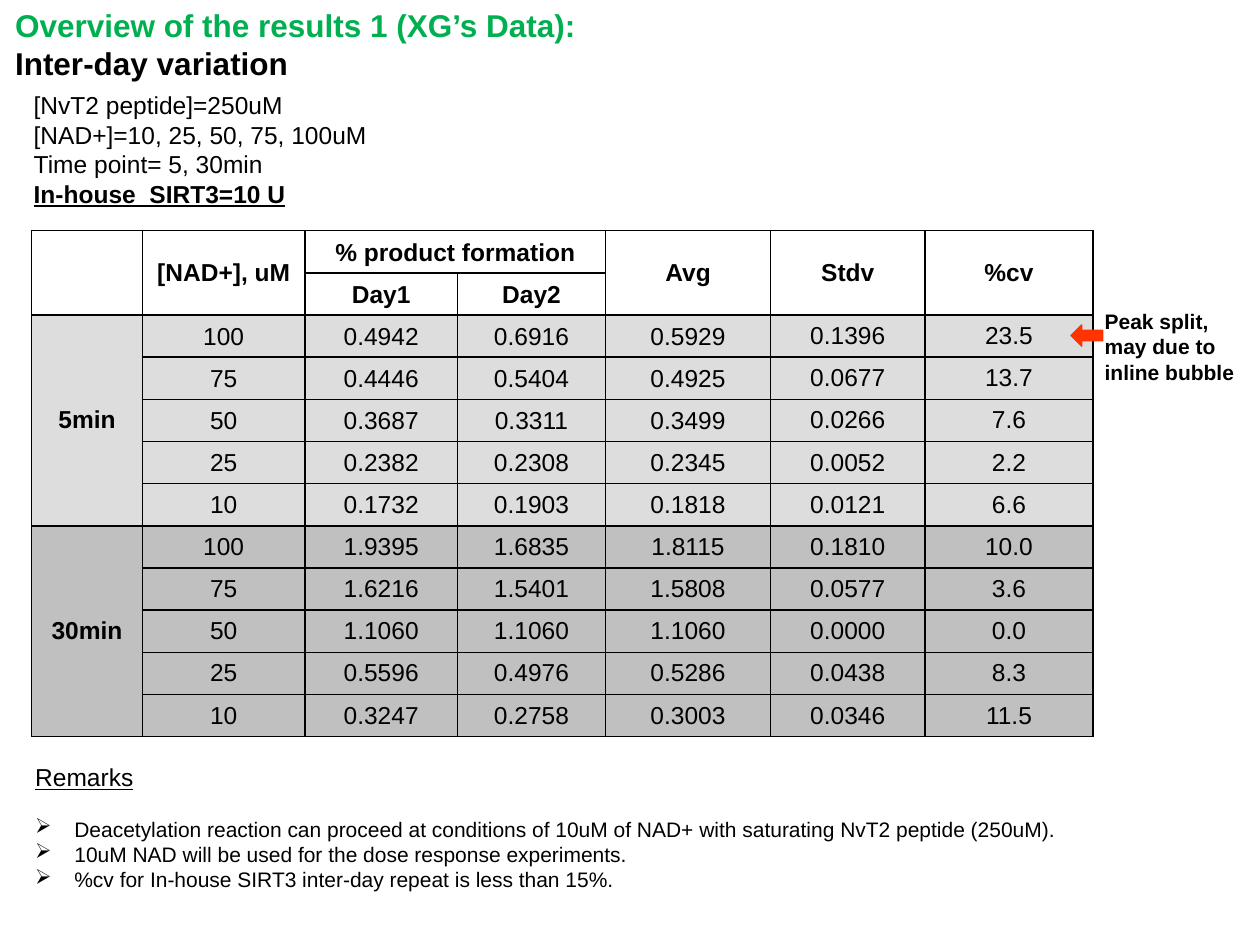
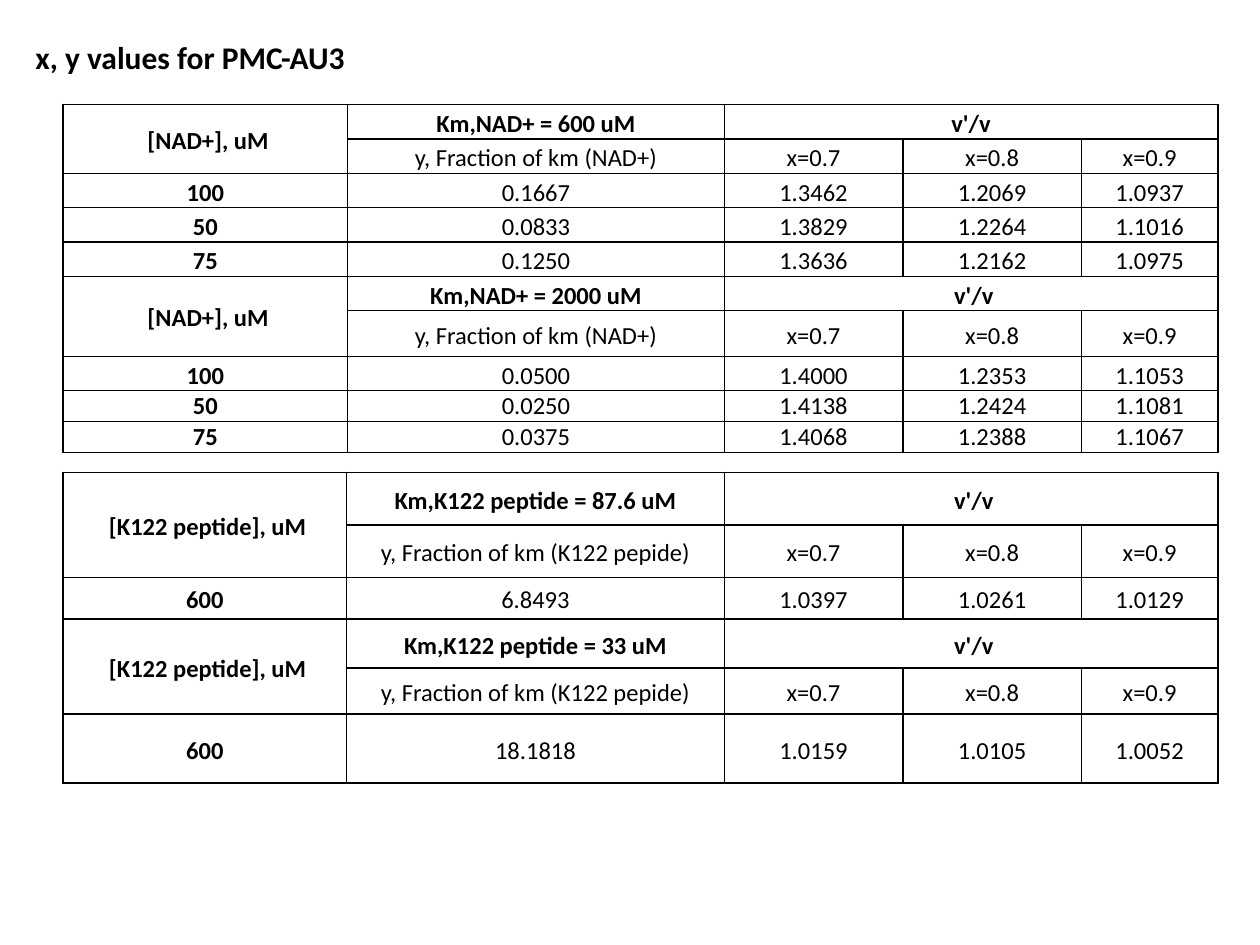
import pptx
import pptx.util
import pptx.dml.color
import pptx.enum.shapes
import pptx.enum.text
import pptx.oxml
import pptx.oxml.ns
import lxml.etree

Cm, Pt = pptx.util.Cm, pptx.util.Pt
ALIGN = pptx.enum.text.PP_ALIGN
ANCHOR = pptx.enum.text.MSO_ANCHOR
qn = pptx.oxml.ns.qn
HUES = {"ink": "000000", "green": "00B050", "red": "FF3300",
        "pale": "DDDDDD", "grey": "C0C0C0"}


def rgb(hue):
    return pptx.dml.color.RGBColor.from_string(HUES[hue])


def put(obj, form):
    for key, val in form.items():
        setattr(obj, key, val)


class Deck:
    """Holds the style and the current slide."""

    def __init__(self):
        self.show = pptx.Presentation()
        put(self.show, {"slide_width": Cm(25.4), "slide_height": Cm(19.05)})
        self.slide = None
        self.face = "Arial"

    def page(self, face):
        self.face = face
        self.slide = self.show.slides.add_slide(self.show.slide_layouts[5])

    def line(self, par, text, size, hue="ink", **form):
        run = par.add_run()
        run.text = text
        put(run.font, {"name": self.face, "size": Pt(size), "bold": False, **form})
        run.font.color.rgb = rgb(hue)

    def fill(self, frame, lines):
        """Write one paragraph for each dict of line values."""
        for i, form in enumerate(lines):
            par = frame.add_paragraph() if i else frame.paragraphs[0]
            par.alignment = ALIGN.LEFT
            self.line(par, **form)

    def title(self, box, lines):
        head = self.slide.shapes.title
        put(head, dict(zip(("left", "top", "width", "height"), map(Cm, box))))
        put(head.text_frame, {"word_wrap": False, "vertical_anchor": ANCHOR.TOP,
                              "auto_size": pptx.enum.text.MSO_AUTO_SIZE.NONE})
        self.fill(head.text_frame, lines)

    def text(self, box, lines):
        frame = self.slide.shapes.add_textbox(*map(Cm, box)).text_frame
        frame.word_wrap = True
        self.fill(frame, lines)
        return frame

    def bullet(self, par, mark, dent):
        props = par._p.get_or_add_pPr()
        props.set("marL", str(Cm(dent)))
        props.set("indent", str(-Cm(dent)))
        lxml.etree.SubElement(props, qn("a:buChar")).set("char", mark)

    def arrow(self, box, hue):
        kind = pptx.enum.shapes.MSO_SHAPE.LEFT_ARROW
        shape = self.slide.shapes.add_shape(kind, *map(Cm, box))
        shape.shadow.inherit = False
        shape.fill.solid()
        shape.fill.fore_color.rgb = rgb(hue)
        shape.line.color.rgb = rgb(hue)
        shape.line.width = Pt(0.75)

    def edge(self, cell):
        props = cell._tc.get_or_add_tcPr()
        for side in ("lnL", "lnR", "lnT", "lnB"):
            rule = lxml.etree.SubElement(props, qn("a:" + side), w=str(Pt(1)))
            paint = lxml.etree.SubElement(rule, qn("a:solidFill"))
            lxml.etree.SubElement(paint, qn("a:srgbClr"), val=HUES["ink"])

    def table(self, spot, cols, rows, data, heads, spans, low, shade=None,
              roomy=None, tight=None, space=None):
        """Bold: first column and head rows. Low cells sit at the bottom."""
        size = map(Cm, (*spot, sum(cols), sum(rows)))
        grid = self.slide.shapes.add_table(len(rows), len(cols), *size).table
        put(grid, {"first_row": False, "horz_banding": False})
        for part, wide in zip(grid.columns, cols):
            part.width = Cm(wide)
        for part, high in zip(grid.rows, rows):
            part.height = Cm(high)
        for r, row in enumerate(data):
            for c, text in enumerate(row):
                cell, down = grid.cell(r, c), (r, c) in low
                self.edge(cell)
                hue = shade(r) if shade else None
                if hue:
                    cell.fill.solid()
                    cell.fill.fore_color.rgb = rgb(hue)
                else:
                    cell.fill.background()
                cell.vertical_anchor = ANCHOR.BOTTOM if down else ANCHOR.MIDDLE
                put(cell, (tight if down else roomy) or {})
                par = cell.text_frame.paragraphs[0]
                put(par, {"alignment": ALIGN.CENTER,
                          "line_spacing": None if down else space})
                if text:
                    self.line(par, text, 14, bold=c == 0 or r in heads)
                else:
                    par._p.get_or_add_endParaRPr().set("sz", "1400")
        for top, left, end, right in spans:
            grid.cell(top, left).merge(grid.cell(end, right))


def days(deck):
    deck.page("Arial")
    deck.title((0.05, 0, 11.91, 1.8), [
        {"text": "Overview of the results 1 (XG’s Data):", "size": 18,
         "hue": "green", "bold": True},
        {"text": "Inter-day variation", "size": 18, "bold": True}])

    # Conditions
    facts = ["[NvT2 peptide]=250uM", "[NAD+]=10, 25, 50, 75, 100uM",
             "Time point= 5, 30min"]
    deck.text((0.43, 1.7, 12.7, 2.62), [
        *({"text": fact, "size": 14} for fact in facts),
        {"text": "In-house  SIRT3=10 U", "size": 14, "bold": True,
         "underline": True}])

    # Results
    data = [
        ["", "[NAD+], uM", "% product formation", "", "Avg", "Stdv", "%cv"],
        ["", "", "Day1", "Day2", "", "", ""],
        ["5min", "100", "0.4942", "0.6916", "0.5929", "0.1396", "23.5"],
        ["", "75", "0.4446", "0.5404", "0.4925", "0.0677", "13.7"],
        ["", "50", "0.3687", "0.3311", "0.3499", "0.0266", "7.6"],
        ["", "25", "0.2382", "0.2308", "0.2345", "0.0052", "2.2"],
        ["", "10", "0.1732", "0.1903", "0.1818", "0.0121", "6.6"],
        ["30min", "100", "1.9395", "1.6835", "1.8115", "0.1810", "10.0"],
        ["", "75", "1.6216", "1.5401", "1.5808", "0.0577", "3.6"],
        ["", "50", "1.1060", "1.1060", "1.1060", "0.0000", "0.0"],
        ["", "25", "0.5596", "0.4976", "0.5286", "0.0438", "8.3"],
        ["", "10", "0.3247", "0.2758", "0.3003", "0.0346", "11.5"]]
    spans = [(0, c, 1, c) for c in (0, 1, 4, 5, 6)]
    spans += [(0, 2, 0, 3), (2, 0, 6, 0), (7, 0, 11, 0)]
    low = {(0, 2), (1, 2), (1, 3)}
    low |= {(r, c) for r in range(2, 5) for c in range(1, 5)}
    deck.table((0.64, 4.65), [2.23, 3.28, 3.07, 2.99, 3.32, 3.12, 3.38],
               [0.85] * 12, data, (0, 1), spans, low,
               lambda r: None if r < 2 else "pale" if r < 7 else "grey")

    # Callout
    deck.arrow((21.59, 6.55, 0.64, 0.43), "red")
    deck.text((22.02, 6.1, 3.18, 1.8), [
        {"text": "Peak split, may due to inline bubble", "size": 12,
         "bold": True}])

    # Remarks
    notes = [
        "Deacetylation reaction can proceed at conditions of 10uM of NAD+ "
        "with saturating NvT2 peptide (250uM).",
        "10uM NAD will be used for the dose response experiments.",
        "%cv for In-house SIRT3 inter-day repeat is less than 15%."]
    frame = deck.text((0.46, 15.24, 23.88, 2.9), [
        {"text": "Remarks", "size": 14, "underline": True},
        *({"text": note, "size": 12} for note in notes)])
    frame.paragraphs[0].space_after = Pt(14)
    for par in frame.paragraphs[1:]:
        deck.bullet(par, "➢", 0.79)


def block(name, limit, part, sign, rows):
    """Two head rows and the value rows below them."""
    return [[f" [{name}], uM", f"Km,{name} = {limit} uM", sign, "", ""],
            ["", f"y, Fraction of km ({part})", "x=0.7", "x=0.8", "x=0.9"],
            *rows]


def ratios(deck):
    deck.page("Calibri")
    deck.title((0.46, 0.64, 7.01, 1.02), [
        {"text": "x, y values for PMC-AU3", "size": 18, "bold": True}])

    def pads(side, top):
        return {"margin_left": Cm(side), "margin_right": Cm(side),
                "margin_top": Cm(top), "margin_bottom": 0}

    def values(spot, cols, rows, data, second, low=()):
        heads = (0, second)
        spans = [(r, 0, r + 1, 0) for r in heads]
        spans += [(r, 2, r, 4) for r in heads]
        deck.table(spot, cols, rows, data, heads, spans, low,
                   roomy=pads(0.17, 0), tight=pads(0.03, 0.02), space=1.15)

    # NAD+ values
    data = block("NAD+", "600", "NAD+", "v'/v", [
        ["100", "0.1667", "1.3462", "1.2069", "1.0937"],
        ["50", "0.0833", "1.3829", "1.2264", "1.1016"],
        ["75", "0.1250", "1.3636", "1.2162", "1.0975"]])
    data += block("NAD+", "2000", "NAD+", " v'/v", [
        ["100", "0.0500", "1.4000", "1.2353", "1.1053"],
        ["50", "0.0250", "1.4138", "1.2424", "1.1081"],
        ["75", "0.0375", "1.4068", "1.2388", "1.1067"]])
    low = {(r, c) for r in (3, 4, 8, 9) for c in range(5) if c or r > 4}
    values((1.27, 2.11), [5.74, 7.59, 3.6, 3.6, 2.75],
           [0.67] * 6 + [0.92, 0.67, 0.61, 0.61], data, 5, low)

    # Peptide values
    data = block("K122 peptide", "87.6", "K122 pepide", " v'/v", [
        ["600", "6.8493", "1.0397", "1.0261", "1.0129"]])
    data += block("K122 peptide", "33", "K122 pepide", " v'/v", [
        ["600", "18.1818", "1.0159", "1.0105", "1.0052"]])
    values((1.27, 9.52), [5.72, 7.61, 3.6, 3.6, 2.75],
           [1.06, 1.06, 0.84, 0.99, 0.92, 1.4], data, 3)


def main():
    deck = Deck()
    days(deck)
    ratios(deck)
    deck.show.save("out.pptx")


if __name__ == "__main__":
    main()
